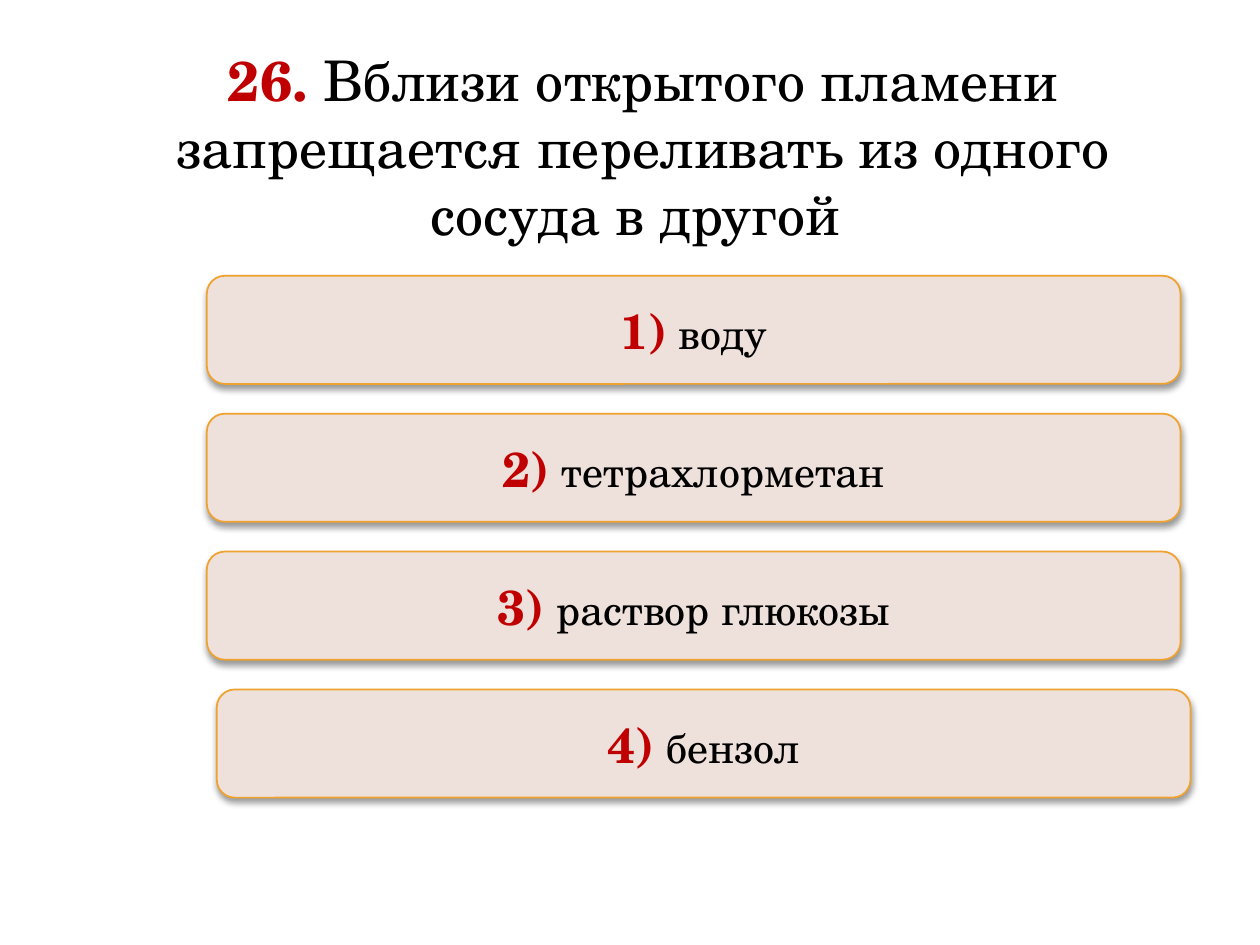
from lxml import etree
from pptx import Presentation
from pptx.dml.color import RGBColor
from pptx.enum.shapes import MSO_SHAPE
from pptx.enum.text import MSO_ANCHOR, PP_ALIGN
from pptx.oxml.ns import qn
from pptx.util import Cm, Pt

CARD = MSO_SHAPE.ROUNDED_RECTANGLE
MIDDLE = MSO_ANCHOR.MIDDLE
CENTER = PP_ALIGN.CENTER

RED = RGBColor(0xC0, 0x00, 0x00)
BLACK = RGBColor(0x00, 0x00, 0x00)
ROSE = RGBColor(0xEE, 0xE0, 0xDB)
AMBER = RGBColor(0xF0, 0xA2, 0x2E)
FONT = "TeX Gyre Schola"

ANSWERS = ["воду", "тетрахлорметан", "раствор глюкозы", "бензол"]


def add_run(para, text, size, color, bold=False):
    run = para.add_run()
    run.text = text
    font = run.font
    font.name = FONT
    font.size = Pt(size)
    font.bold = bold
    font.color.rgb = color


def add_label(frame, mark, text, mark_size, size):
    """Write a red bold number followed by plain black text."""
    frame.word_wrap = True
    para = frame.paragraphs[0]
    para.alignment = CENTER
    add_run(para, mark, mark_size, RED, True)
    add_run(para, " " + text, size, BLACK)


def add_shadow(shape):
    """Soft black shadow falling straight down."""
    shape.shadow.inherit = False
    effects = shape._element.spPr.find(qn("a:effectLst"))
    outer = etree.SubElement(
        effects, qn("a:outerShdw"), blurRad=str(Pt(4)), dist=str(Pt(2)),
        dir="5400000", rotWithShape="0")
    color = etree.SubElement(outer, qn("a:srgbClr"), val=str(BLACK))
    etree.SubElement(color, qn("a:alpha"), val="40000")


def add_title(slide, left, top, width, height):
    box = slide.shapes.add_textbox(left, top, width, height)
    text = "Вблизи открытого пламени запрещается переливать из одного сосуда в другой "
    add_label(box.text_frame, "26.", text, 32, 32)


def add_card(slide, left, top, width, height, mark, text):
    card = slide.shapes.add_shape(CARD, left, top, width, height)
    card.fill.solid()
    card.fill.fore_color.rgb = ROSE
    card.line.color.rgb = AMBER
    card.line.width = Pt(1)
    add_shadow(card)
    card.text_frame.vertical_anchor = MIDDLE
    add_label(card.text_frame, mark, text, 28, 24)


def add_answers(slide, left, top, width, height):
    """Stack the answer cards evenly; the last one is shifted right."""
    tall = Cm(2.18)
    step = (height - tall) // (len(ANSWERS) - 1)
    for i, text in enumerate(ANSWERS):
        shift = Cm(0.2) if i == len(ANSWERS) - 1 else 0
        add_card(slide, left + shift, top + i * step, width, tall,
                 f"{i + 1})", text)


def main():
    deck = Presentation()
    deck.slide_width, deck.slide_height = Cm(25.4), Cm(19.05)
    slide = deck.slides.add_slide(deck.slide_layouts[6])
    # Question
    add_title(slide, Cm(2.77), Cm(0.79), Cm(20.4), Cm(5.74))
    # Answer cards
    add_answers(slide, Cm(4.17), Cm(5.56), Cm(19.63), Cm(10.52))
    deck.save("out.pptx")


if __name__ == "__main__":
    main()
